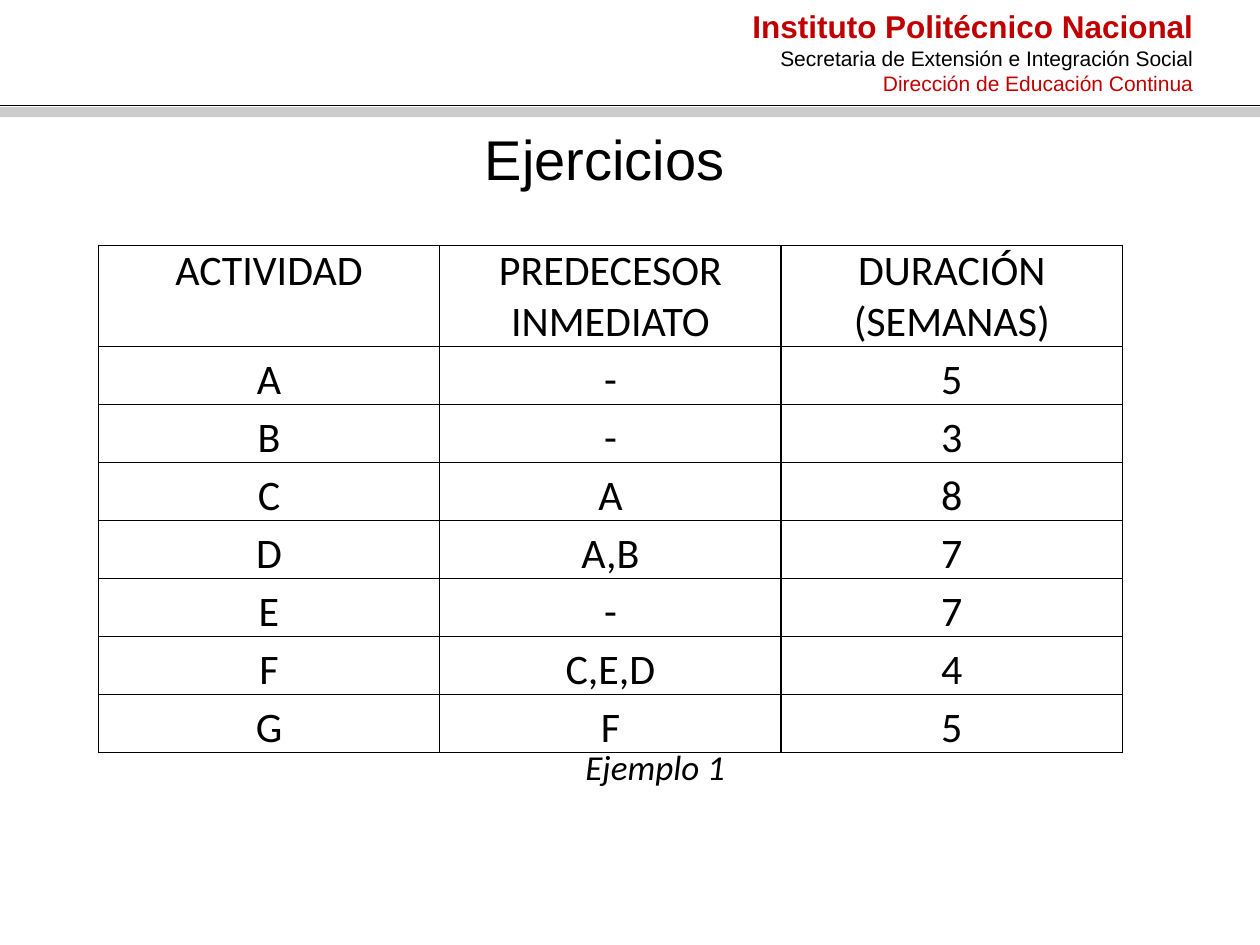
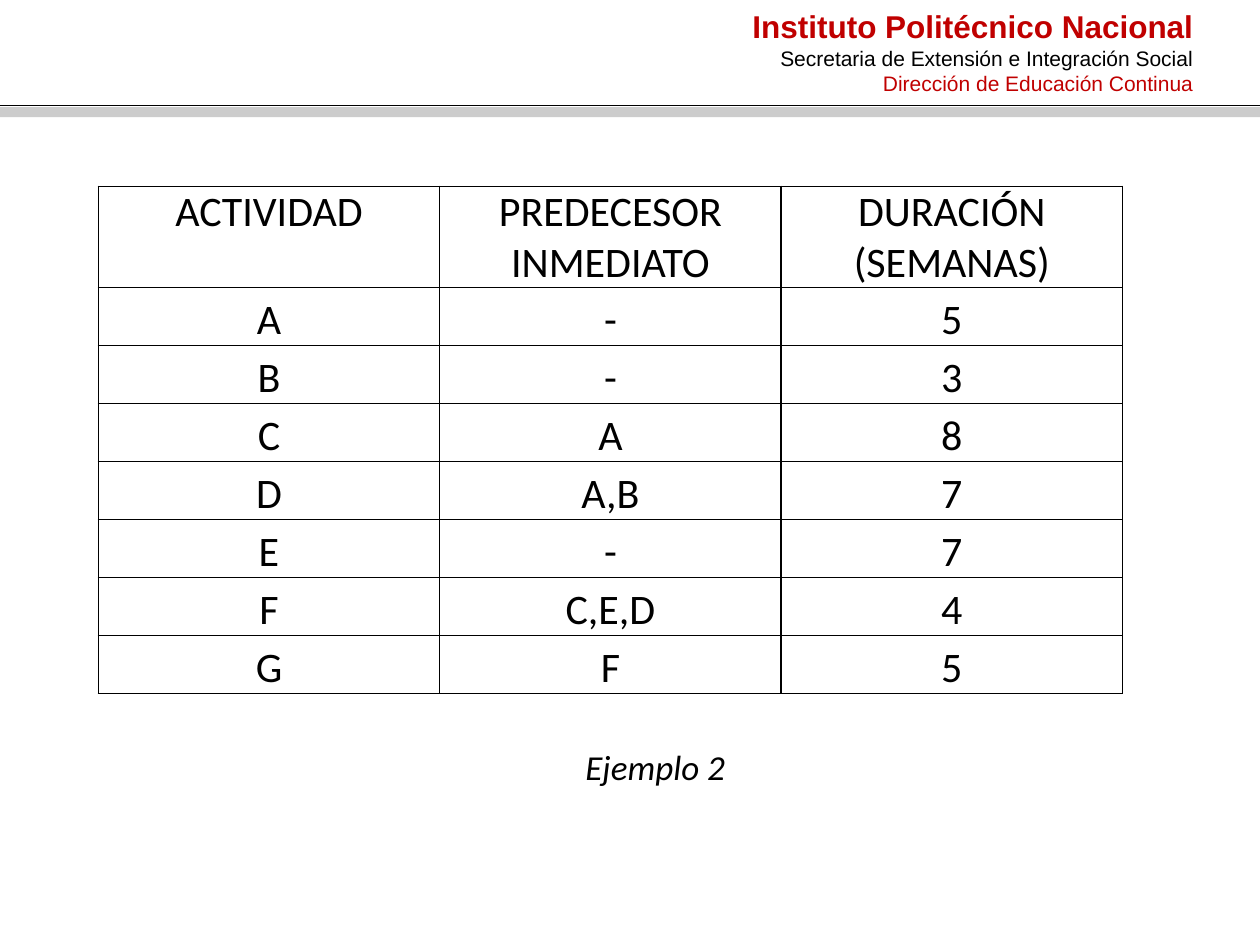
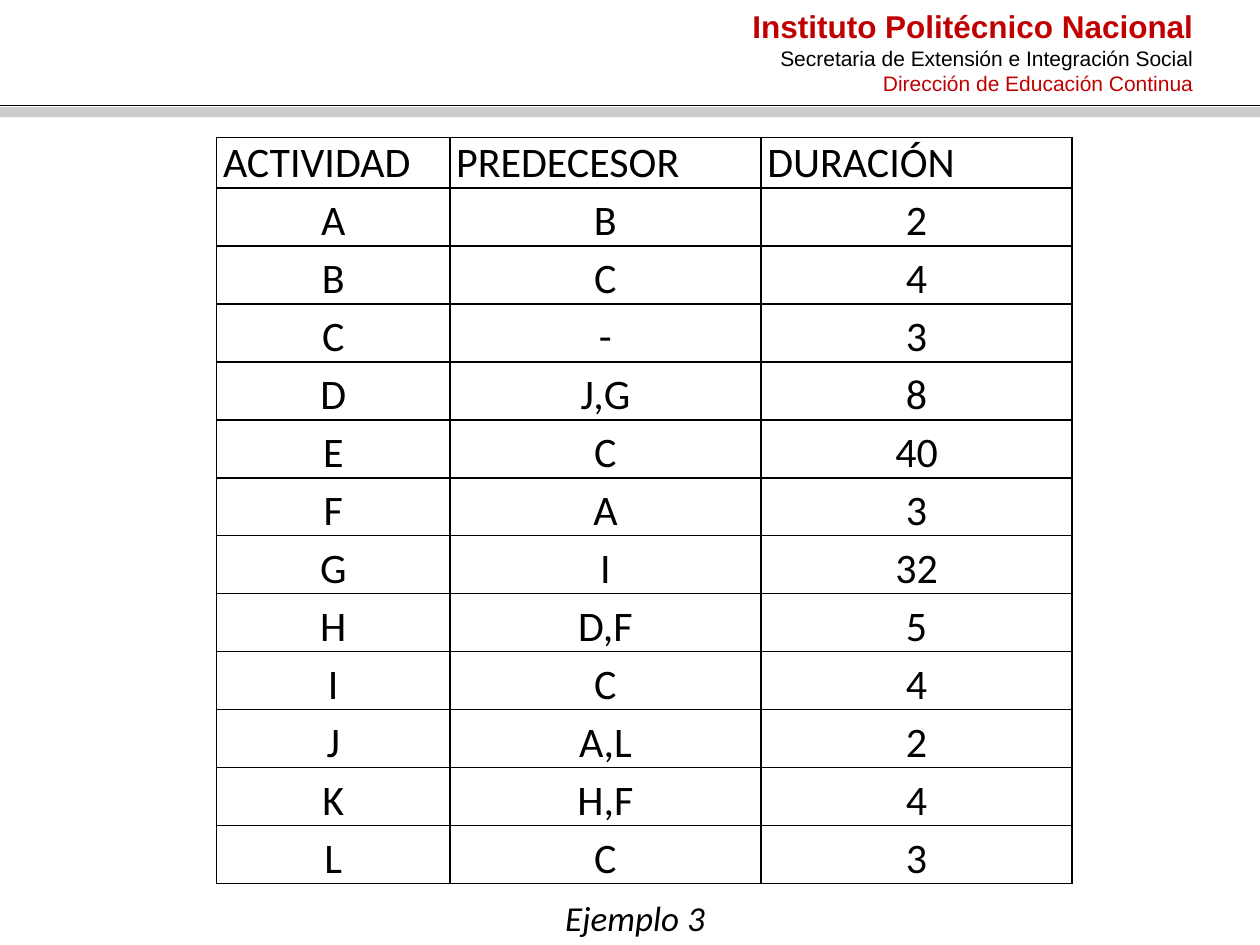
from dataclasses import dataclass

from lxml import etree
from pptx import Presentation
from pptx.dml.color import RGBColor
from pptx.enum import shapes, text
from pptx.oxml import ns
from pptx.util import Inches, Pt

RED = RGBColor(0xC0, 0x00, 0x00)
BLACK = RGBColor(0x00, 0x00, 0x00)
GRAY = RGBColor(0xCC, 0xCC, 0xCC)
HEADING_FONT = "Arial"
BODY_FONT = "Calibri"
SLIDE_WIDTH = 10
ROW_HEIGHT = 0.46


@dataclass(frozen=True)
class TextLine:
    content: str
    size: int
    font: str = BODY_FONT
    color: RGBColor = BLACK
    bold: bool = False
    italic: bool = False
    align: text.PP_ALIGN = text.PP_ALIGN.CENTER
    spacing: float = 1.0


@dataclass(frozen=True)
class Box:
    left: float
    top: float
    width: float
    height: float

    def lengths(self) -> tuple:
        return tuple(map(Inches, (self.left, self.top, self.width, self.height)))


@dataclass(frozen=True)
class Exercise:
    caption: str
    caption_box: Box
    left: float
    top: float
    column_widths: tuple
    header_height: float
    header_align: text.PP_ALIGN
    header: tuple
    activities: tuple
    title: str = ""


INSTITUTION = [
    TextLine("Instituto Politécnico Nacional", 18, HEADING_FONT, RED, bold=True,
             align=text.PP_ALIGN.RIGHT),
    TextLine("Secretaria de Extensión e Integración Social", 12, HEADING_FONT,
             align=text.PP_ALIGN.RIGHT),
    TextLine("Dirección de Educación Continua", 12, HEADING_FONT, RED,
             align=text.PP_ALIGN.RIGHT),
]

WEEKLY_PLAN = dict(
    caption_box=Box(2.19, 5.86, 6.02, 0.44),
    left=0.78,
    column_widths=(2.71, 2.71, 2.71),
    header_height=0.8,
    header_align=text.PP_ALIGN.CENTER,
    header=("ACTIVIDAD", "PREDECESOR INMEDIATO", "DURACIÓN (SEMANAS)"),
    activities=(
        ("A", "-", "5"), ("B", "-", "3"), ("C", "A", "8"), ("D", "A,B", "7"),
        ("E", "-", "7"), ("F", "C,E,D", "4"), ("G", "F", "5"),
    ),
)

EXERCISES = [
    Exercise(caption="Ejemplo 1", top=1.95, title="Ejercicios", **WEEKLY_PLAN),
    Exercise(caption="Ejemplo 2", top=1.48, **WEEKLY_PLAN),
    Exercise(
        caption="Ejemplo 3",
        caption_box=Box(2.03, 7.06, 6.02, 0.44),
        left=1.72,
        top=1.09,
        column_widths=(1.85, 2.47, 2.47),
        header_height=0.4,
        header_align=text.PP_ALIGN.LEFT,
        header=("ACTIVIDAD", "PREDECESOR", "DURACIÓN"),
        activities=(
            ("A", "B", "2"), ("B", "C", "4"), ("C", "-", "3"), ("D", "J,G", "8"),
            ("E", "C", "40"), ("F", "A", "3"), ("G", "I", "32"), ("H", "D,F", "5"),
            ("I", "C", "4"), ("J", "A,L", "2"), ("K", "H,F", "4"), ("L", "C", "3"),
        ),
    ),
]


def write_line(paragraph, line: TextLine) -> None:
    paragraph.text = line.content
    paragraph.alignment = line.align
    paragraph.line_spacing = line.spacing
    font = paragraph.font
    font.name = line.font
    font.size = Pt(line.size)
    font.bold = line.bold
    font.italic = line.italic
    font.color.rgb = line.color


def add_text(slide, box: Box, lines: list, wrap: bool = True,
             anchor: text.MSO_ANCHOR = text.MSO_ANCHOR.TOP) -> None:
    frame = slide.shapes.add_textbox(*box.lengths()).text_frame
    frame.word_wrap = wrap
    frame.vertical_anchor = anchor
    for index, line in enumerate(lines):
        paragraph = frame.add_paragraph() if index else frame.paragraphs[0]
        write_line(paragraph, line)


def add_banner(slide) -> None:
    add_text(slide, Box(3.98, 0.01, 5.59, 0.81), INSTITUTION)
    rule = slide.shapes.add_connector(
        shapes.MSO_CONNECTOR.STRAIGHT,
        Inches(0), Inches(0.84), Inches(SLIDE_WIDTH), Inches(0.84))
    rule.line.color.rgb = BLACK
    rule.line.width = Pt(0.75)
    etree.SubElement(rule._element.spPr, ns.qn("a:effectLst"))
    band = slide.shapes.add_shape(
        shapes.MSO_SHAPE.RECTANGLE, *Box(0, 0.85, SLIDE_WIDTH, 0.08).lengths())
    band.shadow.inherit = False
    band.fill.solid()
    band.fill.fore_color.rgb = GRAY
    band.line.fill.background()


def style_cell(cell) -> None:
    cell.margin_left = cell.margin_right = Inches(0.05)
    cell.margin_top = cell.margin_bottom = Inches(0)
    properties = cell._tc.get_or_add_tcPr()
    for side in ("lnL", "lnR", "lnT", "lnB"):
        border = etree.SubElement(properties, ns.qn(f"a:{side}"), w=str(Pt(1)))
        fill = etree.SubElement(border, ns.qn("a:solidFill"))
        etree.SubElement(fill, ns.qn("a:srgbClr"), val=str(BLACK))
    cell.fill.background()


def add_activity_table(slide, exercise: Exercise) -> None:
    rows = (exercise.header, *exercise.activities)
    heights = [exercise.header_height] + [ROW_HEIGHT] * len(exercise.activities)
    widths = exercise.column_widths
    box = Box(exercise.left, exercise.top, sum(widths), sum(heights))
    table = slide.shapes.add_table(len(rows), len(widths), *box.lengths()).table
    table.first_row = table.horz_banding = False
    for column, width in zip(table.columns, widths):
        column.width = Inches(width)
    for index, (row, height, values) in enumerate(zip(table.rows, heights, rows)):
        row.height = Inches(height)
        align = text.PP_ALIGN.CENTER if index else exercise.header_align
        spacing = 1.15 if index else 1.0
        for cell, value in zip(row.cells, values):
            style_cell(cell)
            write_line(cell.text_frame.paragraphs[0],
                       TextLine(value, 24, align=align, spacing=spacing))


def add_exercise(presentation, exercise: Exercise) -> None:
    slide = presentation.slides.add_slide(presentation.slide_layouts[6])
    add_banner(slide)
    add_text(slide, exercise.caption_box,
             [TextLine(exercise.caption, 20, italic=True)],
             anchor=text.MSO_ANCHOR.MIDDLE)
    add_activity_table(slide, exercise)
    if exercise.title:
        add_text(slide, Box(3.75, 0.94, 2.12, 0.64),
                 [TextLine(exercise.title, 32, HEADING_FONT, align=text.PP_ALIGN.LEFT)],
                 wrap=False)


def main() -> None:
    presentation = Presentation()
    presentation.slide_width = Inches(SLIDE_WIDTH)
    presentation.slide_height = Inches(7.5)
    for exercise in EXERCISES:
        add_exercise(presentation, exercise)
    presentation.save("out.pptx")


if __name__ == "__main__":
    main()
